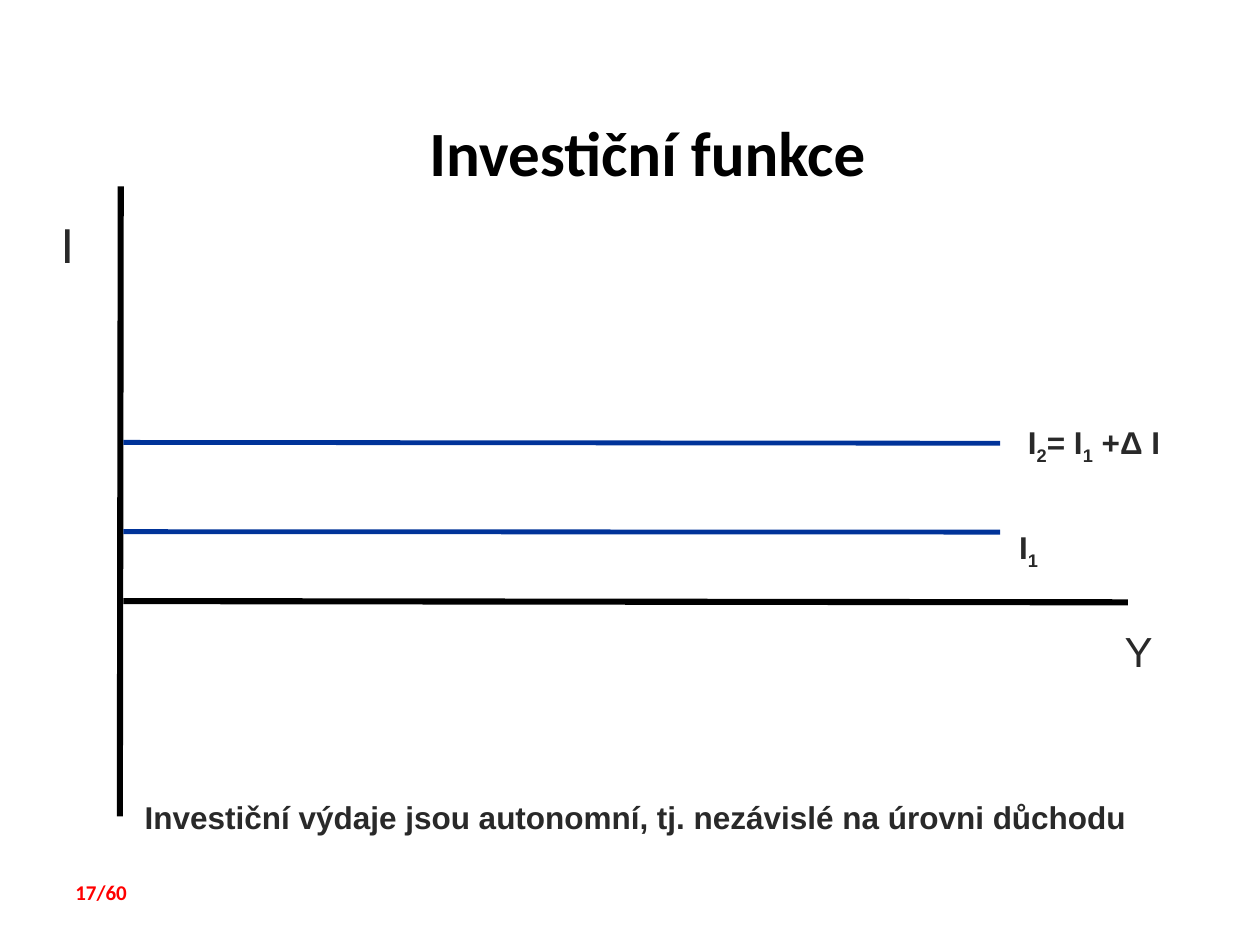
import pptx
import pptx.util
import pptx.dml.color
import pptx.enum.shapes
import pptx.enum.text
from dataclasses import dataclass
from lxml import etree

Pt = pptx.util.Pt
RGB = pptx.dml.color.RGBColor.from_string


@dataclass(frozen=True)
class Theme:
    black: str = "000000"
    text: str = "292929"
    curve: str = "003399"
    page: str = "FF0000"
    heading_font: str = "Calibri"
    label_font: str = "Arial"
    title_size: float = 36
    income_size: float = 24
    investment_size: float = 28
    note_size: float = 18
    page_size: float = 12
    axis_width: float = 3.5
    curve_width: float = 2.75


THEME = Theme()


def add_run(paragraph, text, size, color, font, bold=False, subscript=False):
    run = paragraph.add_run()
    run.text = text
    run.font.size = Pt(size)
    run.font.name = font
    run.font.bold = bold
    run.font.color.rgb = RGB(color)
    if subscript:
        run._r.get_or_add_rPr().set("baseline", "-25000")


def add_label(slide, box, pieces, size, color=THEME.text, font=THEME.label_font, bold=True):
    """Place a text box; every second piece is a subscript."""
    label = slide.shapes.add_textbox(*map(Pt, box))
    label.text_frame.word_wrap = True
    for index, piece in enumerate(pieces):
        add_run(label.text_frame.paragraphs[0], piece, size, color, font, bold,
                subscript=index % 2 == 1)


def add_line(slide, start, end, color, width):
    line = slide.shapes.add_connector(
        pptx.enum.shapes.MSO_CONNECTOR.STRAIGHT, *map(Pt, (*start, *end)))
    line.line.color.rgb = RGB(color)
    line.line.width = Pt(width)
    etree.SubElement(line._element.spPr, pptx.oxml.ns.qn("a:effectLst"))


def add_title(slide, box):
    title = slide.shapes.title
    title.left, title.top, title.width, title.height = map(Pt, box)
    frame = title.text_frame
    frame.vertical_anchor = pptx.enum.text.MSO_ANCHOR.MIDDLE
    frame.paragraphs[0].alignment = pptx.enum.text.PP_ALIGN.CENTER
    add_run(frame.paragraphs[0], "Investiční funkce", THEME.title_size,
            THEME.black, THEME.heading_font, bold=True)


def add_graph(slide, box):
    left, top, width, height = box
    origin_x = left + 1.5
    income_y = top + 237

    # Axes, drawn with a very slight slant
    add_line(slide, (left, top), (left - 0.5, top + height), THEME.black, THEME.axis_width)
    add_line(slide, (origin_x, income_y), (left + width, income_y + 0.7),
             THEME.black, THEME.axis_width)
    add_label(slide, (left + width - 9, income_y + 10.5, 62, 37), ["Y"],
              THEME.income_size, bold=False)
    add_label(slide, (left - 41.5, top + 12.5, 68, 41), ["I"],
              THEME.investment_size, bold=False)

    # Investment levels, independent of income
    curves = (
        (197.3, 0.3, (575.3, 298, 50, 29), ["I", "1"]),
        (146.3, 0.5, (580.3, 238.3, 110, 29), ["I", "2", "= I", "1", " +Δ I"]),
    )
    for rise, slant, label_box, pieces in curves:
        add_line(slide, (origin_x, top + rise), (left + width - 73, top + rise + slant),
                 THEME.curve, THEME.curve_width)
        label_x, label_y, label_width, label_height = label_box
        add_label(slide, (left + label_x - 69, top + label_y - 106.5,
                          label_width, label_height), pieces, THEME.note_size)

    # Conclusion at the foot of the graph
    add_label(slide, (left + 6.6, top + height - 14.3, width, 29),
              ["Investiční výdaje jsou autonomní, tj. nezávislé na úrovni důchodu"],
              THEME.note_size)


def add_page_number(slide, box):
    add_label(slide, box, ["17/60"], THEME.page_size, THEME.page, THEME.heading_font)


def main():
    deck = pptx.Presentation()
    deck.slide_width, deck.slide_height = Pt(720), Pt(540)
    slide = deck.slides.add_slide(deck.slide_layouts[5])
    add_title(slide, (88, 31, 564, 111.5))
    add_graph(slide, (69, 106.5, 575.5, 360))
    add_page_number(slide, (36, 499, 66, 22))
    deck.save("out.pptx")


if __name__ == "__main__":
    main()
